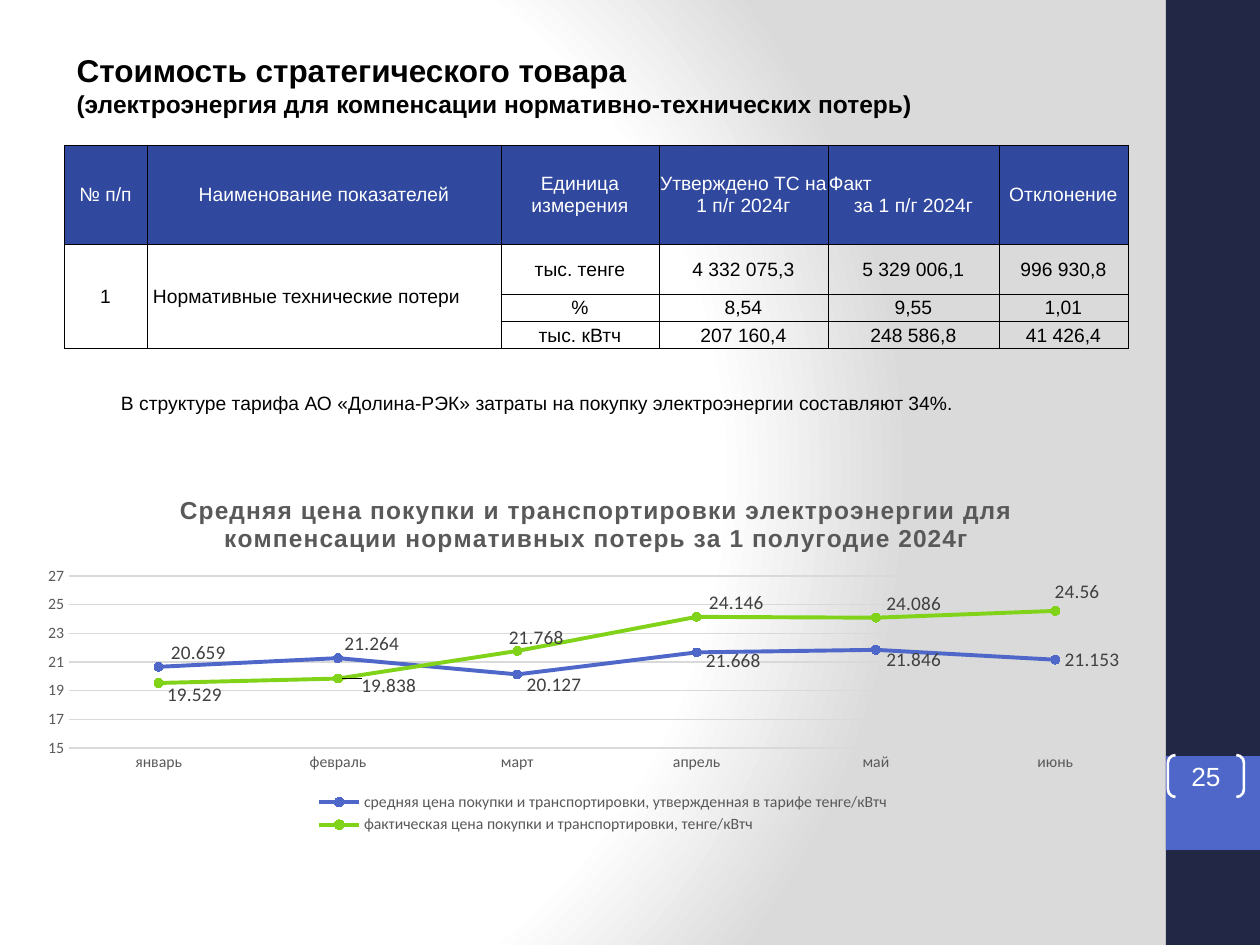
from pptx import Presentation, util as u
from pptx.chart import data as cd
from pptx.dml import color
from pptx.enum import chart as ce, shapes, text
from pptx.oxml import parse_xml
from pptx.oxml.ns import qn

NS = ('xmlns:a="http://schemas.openxmlformats.org/drawingml/2006/main" '
      'xmlns:c="http://schemas.openxmlformats.org/drawingml/2006/chart" '
      'xmlns:p="http://schemas.openxmlformats.org/presentationml/2006/main"')
C = {"navy": "212745", "blue": "4E67C8", "header": "31489F", "green": "81D31A",
     "white": "FFFFFF", "black": "000000", "shade": "DADADA", "grid": "D9D9D9",
     "grey": "595959", "label": "404040"}
A = text.PP_ALIGN
COLS = [83, 354, 158, 169, 171, 129]
ROWS = [99, 50, 27, 28]
CELLS = [
    ["№ п/п", "Наименование показателей", "Единица измерения",
     "Утверждено ТС на 1 п/г 2024г", "Факт\nза 1 п/г 2024г", "Отклонение"],
    ["1", "Нормативные технические потери", "тыс. тенге", "4 332 075,3", "5 329 006,1", "996 930,8"],
    ["", "", "%", "8,54", "9,55", "1,01"],
    ["", "", "тыс. кВтч", "207 160,4", "248 586,8", "41 426,4"],
]
CHART_BOX = (25, 476, 1143, 363)
MONTHS = ["январь", "февраль", "март", "апрель", "май", "июнь"]
SERIES = [
    ("средняя цена покупки и транспортировки, утвержденная в тарифе тенге/кВтч", "blue",
     [20.659, 21.264, 20.127, 21.668, 21.846, 21.153],
     [(3, -14), (-3, -14), (0, 11), (0, 9), (1, 10), (0, 0)]),
    ("фактическая цена покупки и транспортировки, тенге/кВтч", "green",
     [19.529, 19.838, 21.768, 24.146, 24.086, 24.56],
     [(-1, 12), (14, 7), (-18, -13), (3, -14), (1, -14), (-10, -19)]),
]


def px(n):
    """Turn pixels into EMU."""
    return u.Emu(round(n * 914400 / 126))


def rgb(name):
    """Look up a colour."""
    return color.RGBColor.from_string(C[name])


def style(font, size, name="black", face="Arial", bold=False):
    """Format a font."""
    font.size, font.name, font.bold = u.Pt(size), face, bold
    font.color.rgb = rgb(name)


def add_text(p, words, size, name="black", bold=False, align=A.LEFT, left=0, first=0):
    """Add a styled run to a paragraph and set its indents."""
    p.alignment = align
    pPr = p._p.get_or_add_pPr()
    pPr.set("marL", str(px(left)))
    pPr.set("indent", str(px(first)))
    r = p.add_run()
    r.text = words
    style(r.font, size, name, bold=bold)


def set_background(s):
    """Give the slide a radial gradient."""
    stops = "".join(f'<a:gs pos="{pos}000"><a:srgbClr val="{C[name]}"/></a:gs>'
                    for pos, name in ((0, "white"), (75, "white"), (100, "shade")))
    s._element.cSld.insert(0, parse_xml(
        f'<p:bg {NS}><p:bgPr><a:gradFill rotWithShape="1"><a:gsLst>{stops}</a:gsLst>'
        '<a:path path="circle"><a:fillToRect l="20000" t="50000" r="100000" b="50000"/></a:path>'
        '</a:gradFill><a:effectLst/></p:bgPr></p:bg>'))


def add_block(s, box, fill):
    """Add a plain filled rectangle."""
    sp = s.shapes.add_shape(shapes.MSO_SHAPE.RECTANGLE, *map(px, box))
    sp.shadow.inherit = False
    sp.fill.solid()
    sp.fill.fore_color.rgb = rgb(fill)
    sp.line.fill.background()


def add_page_number(s, number):
    """Add the page number between brackets."""
    sp = s.shapes.add_shape(shapes.MSO_SHAPE.DOUBLE_BRACKET, *map(px, (1168, 755, 76, 42)))
    sp.adjustments[0] = 0.18
    sp.shadow.inherit = False
    sp.fill.background()
    sp.line.color.rgb, sp.line.width = rgb("white"), u.Pt(1.5)
    tf = sp.text_frame
    tf.margin_left = tf.margin_right = tf.margin_top = tf.margin_bottom = 0
    tf.vertical_anchor = text.MSO_ANCHOR.MIDDLE
    add_text(tf.paragraphs[0], number, 15, "white", align=A.CENTER)


def fill_title(sp):
    """Place the title and write its two lines."""
    sp.left, sp.top, sp.width, sp.height = map(px, (15, 45, 1121, 81))
    tf = sp.text_frame
    tf.word_wrap, tf.vertical_anchor = True, text.MSO_ANCHOR.TOP
    tf.auto_size = text.MSO_AUTO_SIZE.NONE
    add_text(tf.paragraphs[0], "Стоимость стратегического товара", 18, bold=True, left=49)
    add_text(tf.add_paragraph(), "(электроэнергия для компенсации нормативно-технических потерь)",
             14, bold=True, left=49)


def add_note(s):
    """Add the sentence below the table."""
    tf = s.shapes.add_textbox(*map(px, (74, 386, 966, 49))).text_frame
    tf.word_wrap = True
    tf.margin_left = tf.margin_right = px(9)
    tf.margin_top = tf.margin_bottom = px(5)
    add_text(tf.paragraphs[0], "В структуре тарифа АО «Долина-РЭК» затраты на покупку "
             "электроэнергии составляют 34%.", 11, align=A.JUSTIFY, first=38)


def format_cell(cell, words, header, name_column):
    """Draw the borders, fill and text of one cell."""
    tcPr = cell._tc.get_or_add_tcPr()
    for side in "LRTB":
        tcPr.append(parse_xml(f'<a:ln{side} {NS} w="6350"><a:solidFill><a:srgbClr val="{C["black"]}"/>'
                              f'</a:solidFill></a:ln{side}>'))
    cell.margin_left = cell.margin_right = cell.margin_top = px(1)
    cell.margin_bottom = 0
    cell.vertical_anchor = text.MSO_ANCHOR.MIDDLE
    if header:
        cell.fill.solid()
        cell.fill.fore_color.rgb = rgb("header")
    else:
        cell.fill.background()
    lines = words.split("\n") if words else []
    for i, line in enumerate(lines):
        p = cell.text_frame.add_paragraph() if i else cell.text_frame.paragraphs[0]
        is_name = name_column and not header
        at_left = is_name or i < len(lines) - 1
        add_text(p, line, 11, "white" if header else "black",
                 align=A.LEFT if at_left else A.CENTER, left=5 if is_name else 0)


def add_indicator_table(s):
    """Add the table of indicators."""
    box = (64, 145, sum(COLS), sum(ROWS))
    table = s.shapes.add_table(len(ROWS), len(COLS), *map(px, box)).table
    table.horz_banding = False
    for col, width in zip(table.columns, COLS):
        col.width = px(width)
    for row, height in zip(table.rows, ROWS):
        row.height = px(height)
    for r, row in enumerate(CELLS):
        for c, words in enumerate(row):
            format_cell(table.cell(r, c), words, r == 0, c == 1)
    for c in (0, 1):
        table.cell(1, c).merge(table.cell(3, c))


def manual_layout(box=None, shift=None):
    """Build a chart layout from a slide box or from a label shift."""
    left, top, width, height = CHART_BOX
    if box:
        x, y, w, h = box
        parts = {"x": (x - left) / width, "y": (y - top) / height, "w": w / width, "h": h / height}
        tags = '<c:layoutTarget val="inner"/>' if y < 700 else ""
        tags += '<c:xMode val="edge"/><c:yMode val="edge"/>'
    else:
        parts, tags = {"x": shift[0] / width, "y": shift[1] / height}, ""
    tags += "".join(f'<c:{k} val="{v:.4f}"/>' for k, v in parts.items())
    return parse_xml(f"<c:layout {NS}><c:manualLayout>{tags}</c:manualLayout></c:layout>")


def place(parent, index, layout):
    """Put a layout into a chart element in place of any earlier one."""
    for old in parent.findall(qn("c:layout")):
        parent.remove(old)
    parent.insert(index, layout)


def format_series(ser, name, shifts):
    """Format one line with its markers and shifted value labels."""
    ser.smooth = False
    ser.format.line.color.rgb, ser.format.line.width = rgb(name), u.Pt(2.25)
    ser.marker.style, ser.marker.size = ce.XL_MARKER_STYLE.CIRCLE, 5
    ser.marker.format.fill.solid()
    ser.marker.format.fill.fore_color.rgb = rgb(name)
    ser.marker.format.line.color.rgb = rgb(name)
    ser.data_labels.show_value = True
    style(ser.data_labels.font, 11, "label", "Calibri")
    for i, shift in enumerate(shifts):
        label = ser.points[i].data_label
        style(label.font, 11, "label", "Calibri")
        label.position = ce.XL_LABEL_POSITION.RIGHT
    for dLbl, shift in zip(ser._element.findall(".//" + qn("c:dLbl")), shifts):
        place(dLbl, 1, manual_layout(shift=shift))


def add_price_chart(s):
    """Add the line chart of monthly prices."""
    data = cd.CategoryChartData()
    data.categories = MONTHS
    for name, _, values, _ in SERIES:
        data.add_series(name, values)
    chart = s.shapes.add_chart(ce.XL_CHART_TYPE.LINE_MARKERS, *map(px, CHART_BOX), data).chart
    style(chart.font, 10, face="Calibri")
    chart.has_title = True
    p = chart.chart_title.text_frame.paragraphs[0]
    r = p.add_run()
    r.text = ("Средняя цена покупки и транспортировки электроэнергии для "
              "компенсации нормативных потерь за 1 полугодие 2024г")
    style(r.font, 14, "grey", bold=True)
    r.font._element.set("spc", "50")
    chart.has_legend = True
    chart.legend.position = ce.XL_LEGEND_POSITION.BOTTOM
    chart.legend.include_in_layout = False
    style(chart.legend.font, 9, "grey", "Calibri")
    place(chart.legend._element, 1, manual_layout((308, 789, 590, 49)))
    place(chart._chartSpace.chart.plotArea, 0, manual_layout((69, 576, 1076, 172)))
    cats, vals = chart.category_axis, chart.value_axis
    for axis in (cats, vals):
        axis.major_tick_mark = axis.minor_tick_mark = ce.XL_TICK_MARK.NONE
        style(axis.tick_labels.font, 9, "grey", "Calibri")
    vals.minimum_scale, vals.maximum_scale, vals.major_unit = 15, 27, 2
    vals.format.line.fill.background()
    for line in (cats.format.line, vals.major_gridlines.format.line):
        line.color.rgb, line.width = rgb("grid"), u.Pt(0.75)
    for ser, (_, name, _, shifts) in zip(chart.plots[0].series, SERIES):
        format_series(ser, name, shifts)


def main():
    """Build the slide and save it."""
    prs = Presentation()
    prs.slide_width, prs.slide_height = px(1260), px(945)
    s = prs.slides.add_slide(prs.slide_layouts[5])
    set_background(s)
    add_block(s, (1166, 0, 94, 945), "navy")
    add_block(s, (1166, 756, 94, 94), "blue")
    add_note(s)
    add_page_number(s, "25")
    add_indicator_table(s)
    add_price_chart(s)
    fill_title(s.shapes.title)
    prs.save("out.pptx")


if __name__ == "__main__":
    main()
